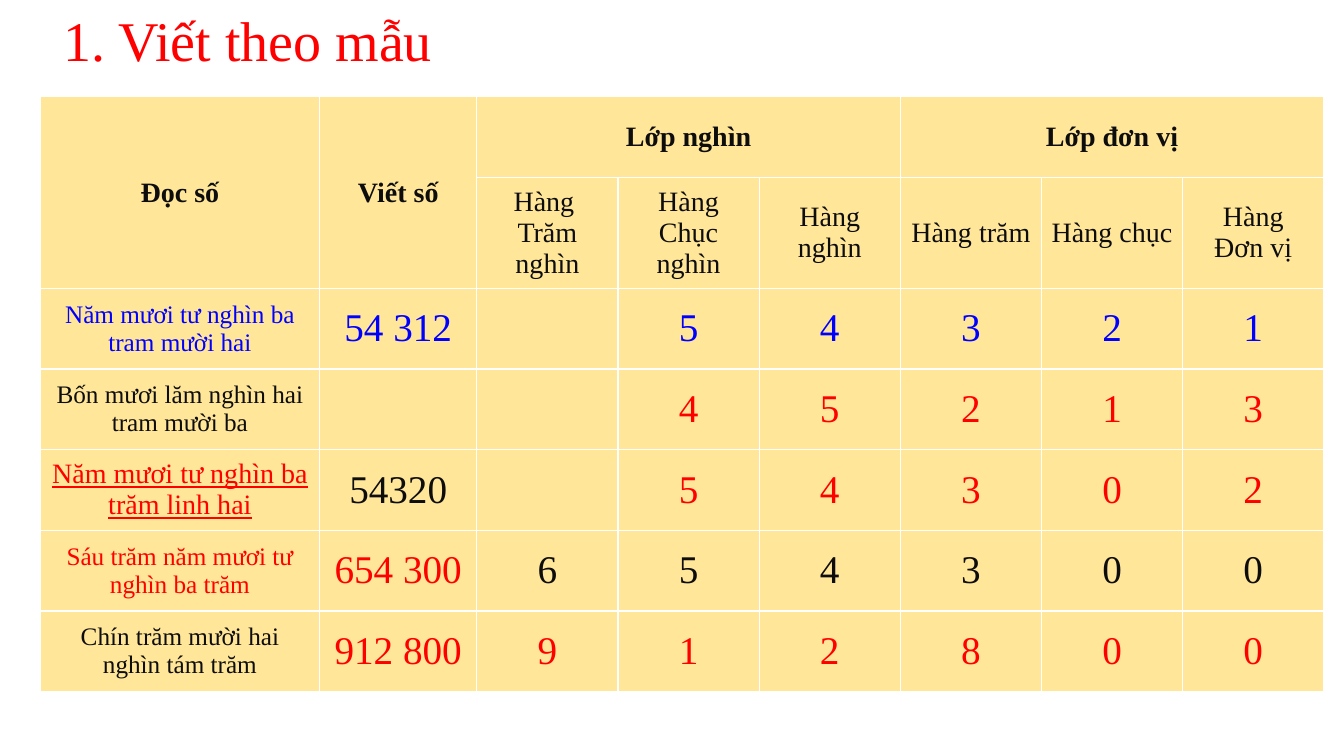
from dataclasses import dataclass

from pptx import Presentation
from pptx.dml.color import RGBColor
from pptx.enum.text import MSO_ANCHOR, MSO_AUTO_SIZE, PP_ALIGN
from pptx.util import Inches, Pt

LEFT, CENTER = PP_ALIGN.LEFT, PP_ALIGN.CENTER
TOP, MIDDLE = MSO_ANCHOR.TOP, MSO_ANCHOR.MIDDLE
GROW = MSO_AUTO_SIZE.SHAPE_TO_FIT_TEXT


@dataclass(frozen=True)
class Theme:
    font: str = "Times New Roman"
    cell_fill: RGBColor = RGBColor(0xFF, 0xE6, 0x99)
    given: RGBColor = RGBColor(0x0D, 0x0D, 0x0D)
    sample: RGBColor = RGBColor(0x00, 0x00, 0xFF)
    answer: RGBColor = RGBColor(0xFF, 0x00, 0x00)
    title_size: int = 40
    number_size: int = 28
    heading_size: int = 20
    reading_size: int = 18


THEME = Theme()
COLUMN_WIDTHS = [2.77, 1.56] + [1.4] * 6
ROW_HEIGHT = 0.8
CLASS_HEADINGS = [
    (0, 2, 1, "Đọc số"),
    (1, 2, 1, "Viết số"),
    (2, 1, 3, "Lớp nghìn"),
    (5, 1, 3, "Lớp đơn vị"),
]
PLACE_HEADINGS = [
    "Hàng \nTrăm nghìn", "Hàng\nChục nghìn", "Hàng\nnghìn",
    "Hàng trăm", "Hàng chục", "Hàng\nĐơn vị",
]
GIVEN, SAMPLE, ANSWER = THEME.given, THEME.sample, THEME.answer
EXERCISES = [
    ("Năm mươi tư nghìn ba tram mười hai", SAMPLE, "54 312", SAMPLE, " 54321", SAMPLE),
    ("Bốn mươi lăm nghìn hai tram mười ba", GIVEN, "", ANSWER, " 45213", ANSWER),
    ("Năm mươi tư nghìn ba trăm linh hai", ANSWER, "54320", GIVEN, " 54302", ANSWER),
    ("Sáu trăm năm mươi tư nghìn ba trăm", ANSWER, "654 300", ANSWER, "654300", GIVEN),
    ("Chín trăm mười hai nghìn tám trăm", GIVEN, "912 800", ANSWER, "912800", ANSWER),
]
UNDERLINED_EXERCISE = 2


def write(frame, text, size, color, align=CENTER, bold=False, underline=False):
    frame.text = text
    for paragraph in frame.paragraphs:
        paragraph.alignment = align
        for run in paragraph.runs:
            font = run.font
            font.name = THEME.font
            font.size = Pt(size)
            font.color.rgb = color
            font.bold = bold
            font.underline = underline


def place_title(slide, left, top, width, height):
    heading = slide.shapes.title
    heading.left, heading.top = Inches(left), Inches(top)
    heading.width, heading.height = Inches(width), Inches(height)
    frame = heading.text_frame
    write(frame, "1. Viết theo mẫu", THEME.title_size, THEME.answer, LEFT)
    frame.vertical_anchor = TOP
    frame.word_wrap = True
    frame.auto_size = GROW


def fill_headings(numbers):
    for column, rows, columns, text in CLASS_HEADINGS:
        cell = numbers.cell(0, column)
        cell.merge(numbers.cell(rows - 1, column + columns - 1))
        write(cell.text_frame, text, THEME.heading_size, GIVEN, bold=True)
    for column, text in enumerate(PLACE_HEADINGS, 2):
        write(numbers.cell(1, column).text_frame, text, THEME.heading_size, GIVEN)


def fill_exercises(numbers):
    for index, exercise in enumerate(EXERCISES):
        reading, reading_color, number, number_color, digits, digit_color = exercise
        row = index + 2
        underlined = index == UNDERLINED_EXERCISE
        reading_size = THEME.heading_size if underlined else THEME.reading_size
        write(numbers.cell(row, 0).text_frame, reading, reading_size,
              reading_color, underline=underlined)
        write(numbers.cell(row, 1).text_frame, number, THEME.number_size, number_color)
        for column, digit in enumerate(digits, 2):
            write(numbers.cell(row, column).text_frame, digit.strip(),
                  THEME.number_size, digit_color)


def place_number_table(slide, left, top):
    row_count = len(EXERCISES) + 2
    numbers = slide.shapes.add_table(
        row_count, len(COLUMN_WIDTHS), Inches(left), Inches(top),
        Inches(sum(COLUMN_WIDTHS)), Inches(ROW_HEIGHT * row_count)).table
    numbers.horz_banding = False
    for column, width in zip(numbers.columns, COLUMN_WIDTHS):
        column.width = Inches(width)
    for row in numbers.rows:
        row.height = Inches(ROW_HEIGHT)
    for cell in numbers.iter_cells():
        cell.fill.solid()
        cell.fill.fore_color.rgb = THEME.cell_fill
        cell.vertical_anchor = MIDDLE
    fill_headings(numbers)
    fill_exercises(numbers)


def main():
    deck = Presentation()
    deck.slide_width, deck.slide_height = Inches(13.33), Inches(7.5)
    slide = deck.slides.add_slide(deck.slide_layouts[5])
    place_title(slide, 0.53, 0, 6.63, 0.77)
    place_number_table(slide, 0.4, 0.96)
    deck.save("out.pptx")


if __name__ == "__main__":
    main()
